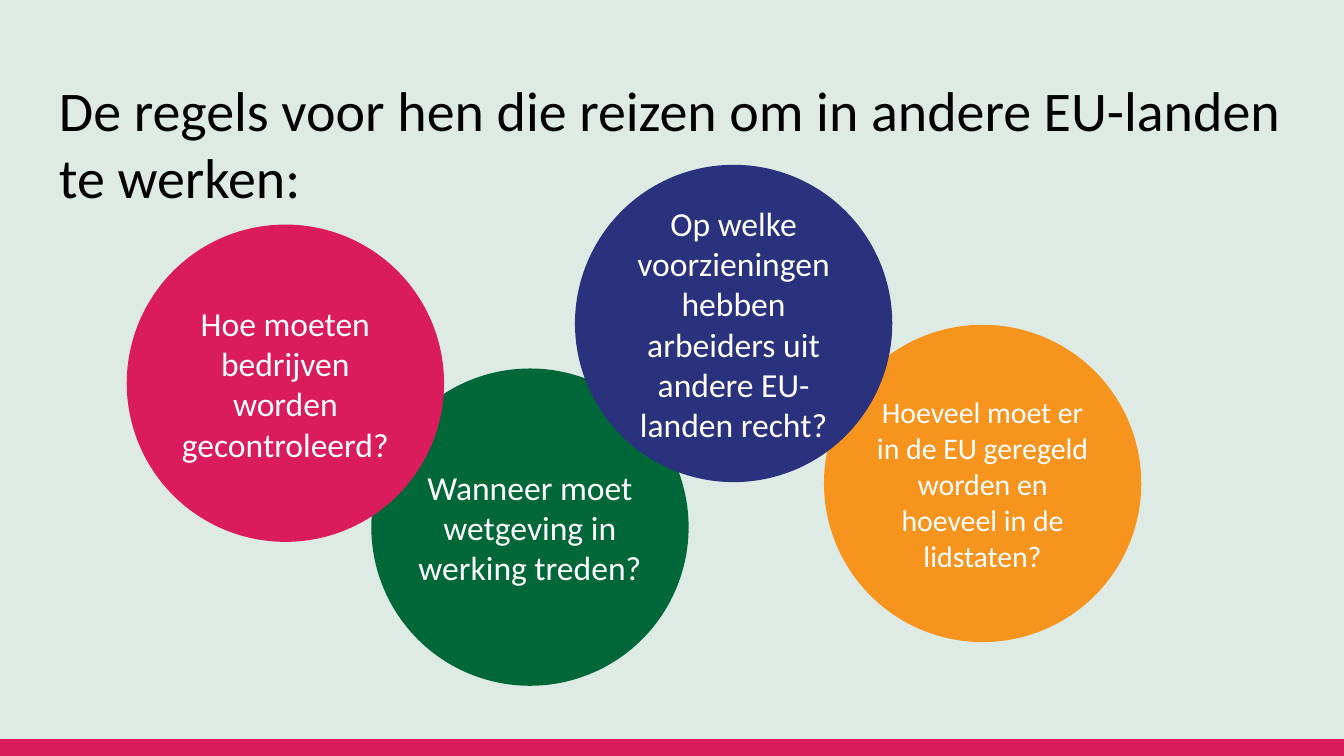
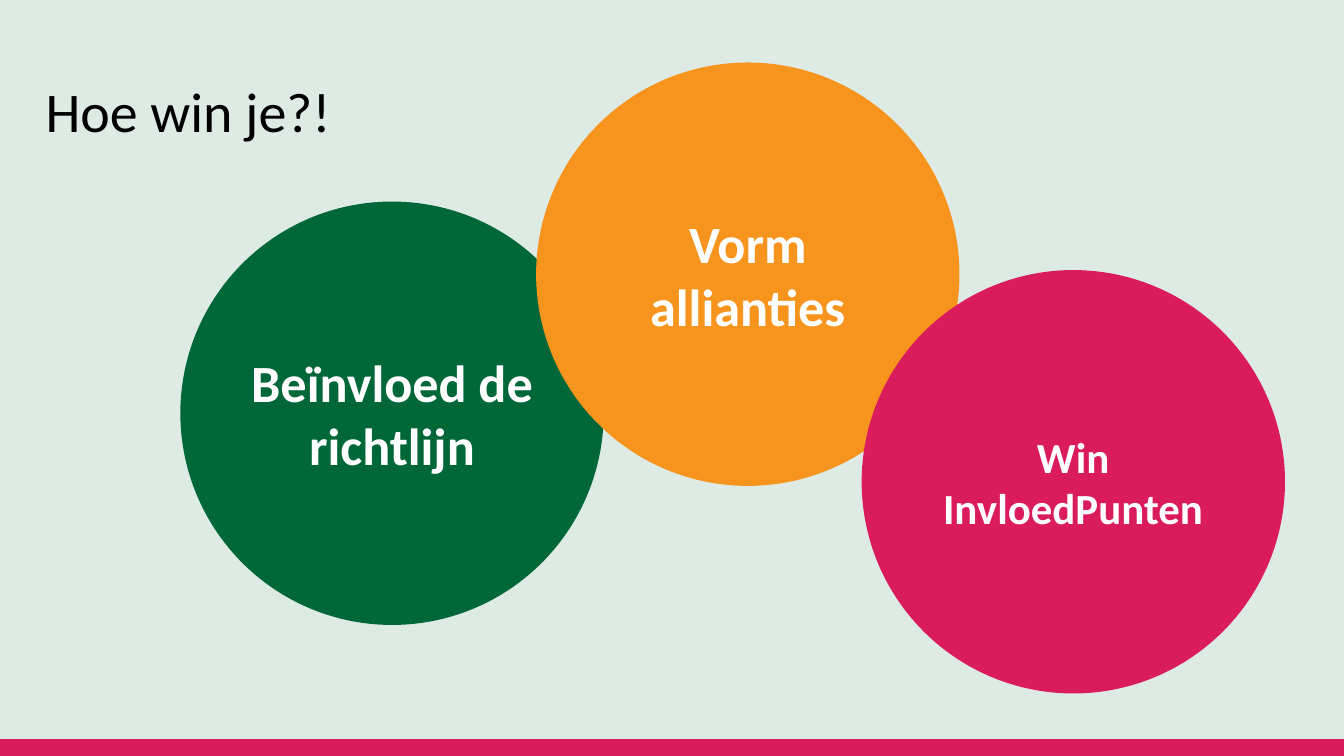
import dataclasses

import pptx
import pptx.dml.color
import pptx.enum.shapes
import pptx.enum.text
import pptx.util


@dataclasses.dataclass(frozen=True)
class Theme:
    font: str = "Calibri"
    background: str = "DEEBE5"
    black: str = "000000"
    white: str = "FFFFFF"
    green: str = "006838"
    orange: str = "F7941E"
    blue: str = "2A317D"
    pink: str = "DA1C5C"
    title_size: float = 30
    question_size: float = 18
    long_question_size: float = 16
    goal_size: float = 28
    long_goal_size: float = 23


THEME = Theme()
SLIDE_WIDTH, SLIDE_HEIGHT = 720, 405
BAND_HEIGHT = 8.64
TITLE_WIDTH, TITLE_HEIGHT = 671.04, 48.24
INSET = 7.2


def rgb(value):
    return pptx.dml.color.RGBColor.from_string(value)


def points(*lengths):
    return [pptx.util.Pt(length) for length in lengths]


def apply(target, values):
    for name, value in values.items():
        setattr(target, name, value)


def paint(shape, color):
    shape.shadow.inherit = False
    shape.fill.solid()
    shape.fill.fore_color.rgb = rgb(color)


def write(shape, text, size, color, align, anchor, side_inset, bold=False):
    frame = shape.text_frame
    left, top = points(side_inset, INSET)
    apply(frame, {
        "word_wrap": True,
        "vertical_anchor": anchor,
        "margin_left": left,
        "margin_right": left,
        "margin_top": top,
        "margin_bottom": top,
    })
    paragraph = frame.paragraphs[0]
    paragraph.alignment = align
    run = paragraph.add_run()
    run.text = text
    apply(run.font, {"name": THEME.font, "size": pptx.util.Pt(size), "bold": bold})
    run.font.color.rgb = rgb(color)


def add_title(slide, text, left, top):
    shape = slide.shapes.add_textbox(*points(left, top, TITLE_WIDTH, TITLE_HEIGHT))
    write(shape, text, THEME.title_size, THEME.black,
          pptx.enum.text.PP_ALIGN.LEFT, pptx.enum.text.MSO_ANCHOR.TOP, INSET)


def add_band(slide):
    box = points(0, SLIDE_HEIGHT - BAND_HEIGHT, SLIDE_WIDTH, BAND_HEIGHT)
    band = slide.shapes.add_shape(pptx.enum.shapes.MSO_SHAPE.RECTANGLE, *box)
    paint(band, THEME.pink)
    band.line.color.rgb = rgb(THEME.pink)
    band.line.width = pptx.util.Pt(0.75)


def add_circle(slide, diameter, left, top, color, text, size, side_inset=0, bold=False):
    box = points(left, top, diameter, diameter)
    circle = slide.shapes.add_shape(pptx.enum.shapes.MSO_SHAPE.OVAL, *box)
    paint(circle, color)
    circle.line.fill.background()
    write(circle, text, size, THEME.white, pptx.enum.text.PP_ALIGN.CENTER,
          pptx.enum.text.MSO_ANCHOR.MIDDLE, side_inset, bold)


def add_circle_slide(presentation, title, title_left, title_top, diameter, circles, bold=False):
    slide = presentation.slides.add_slide(presentation.slide_layouts[6])
    slide.background.fill.solid()
    slide.background.fill.fore_color.rgb = rgb(THEME.background)
    add_title(slide, title, title_left, title_top)
    add_band(slide)
    for circle in circles:
        add_circle(slide, diameter, *circle, bold=bold)


def main():
    presentation = pptx.Presentation()
    width, height = points(SLIDE_WIDTH, SLIDE_HEIGHT)
    apply(presentation, {"slide_width": width, "slide_height": height})

    questions = [
        (198.9, 197.4, THEME.green, "Wanneer moet wetgeving in werking treden?",
         THEME.question_size),
        (441.4, 174, THEME.orange,
         "Hoeveel moet er in de EU geregeld worden en hoeveel in de lidstaten?",
         THEME.long_question_size),
        (308, 88.3, THEME.blue,
         "Op welke voorzieningen hebben arbeiders uit andere EU-landen recht?",
         THEME.question_size),
        (67.9, 120.3, THEME.pink, "Hoe moeten bedrijven worden gecontroleerd?",
         THEME.question_size),
    ]
    add_circle_slide(presentation,
                     "De regels voor hen die reizen om in andere EU-landen te werken:",
                     24.5, 33.1, 170, questions)

    goals = [
        (96.6, 108, THEME.green, "Beïnvloed de richtlijn", THEME.goal_size, 2.88),
        (287.2, 33.5, THEME.orange, "Vorm allianties", THEME.goal_size, 2.88),
        (461.6, 144.7, THEME.pink, "Win InvloedPunten", THEME.long_goal_size),
    ]
    add_circle_slide(presentation, "Hoe win je?!", 17.3, 33.8, 226.8, goals, bold=True)

    presentation.save("out.pptx")


if __name__ == "__main__":
    main()
